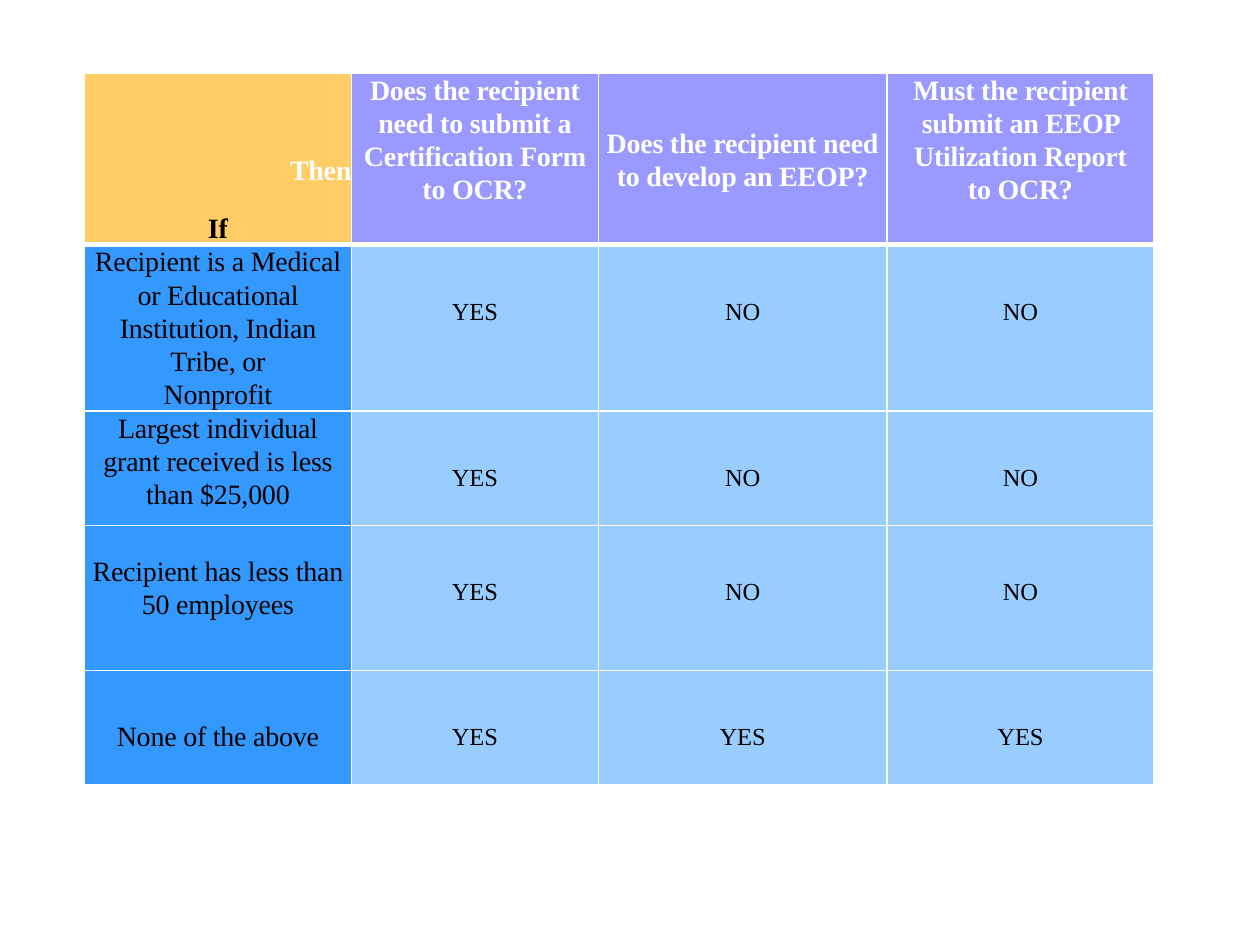
from pptx import Presentation
from pptx.dml.color import RGBColor
from pptx.enum.text import MSO_ANCHOR, PP_ALIGN
from pptx.oxml import parse_xml
from pptx.oxml.ns import nsdecls
from pptx.util import Inches, Pt

TOP = MSO_ANCHOR.TOP
MID = PP_ALIGN.CENTER
RIGHT = PP_ALIGN.RIGHT

HUES = {"white": "FFFFFF", "black": "000000", "gold": "FFCC66",
        "violet": "9999FF", "blue": "3399FF", "pale": "99CCFF"}
COLS = [2.12, 1.96, 2.29, 2.12]
ROWS = [1.36, 1.3, 0.91, 1.15, 0.91]
HEADS = [
    ("Does the recipient need to submit a Certification Form to OCR?", 0, 0.07),
    ("Does the recipient need\nto develop an EEOP?", 0.42, 0),
    ("Must the recipient submit an EEOP Utilization Report to OCR?", 0, 0.2),
]
CASES = [
    ("Recipient is a Medical or Educational Institution, Indian Tribe, or\nNonprofit",
     0, ["YES", "NO", "NO"]),
    ("Largest individual grant received is less than $25,000",
     0, ["YES", "NO", "NO"]),
    ("Recipient has less than 50 employees", 0.23, ["YES", "NO", "NO"]),
    ("None of the above", 0.39, ["YES", "YES", "YES"]),
]


def hue(name):
    return RGBColor.from_string(HUES[name])


def edge(cell, side, width):
    cell._tc.get_or_add_tcPr().append(parse_xml(
        f'<a:ln{side} {nsdecls("a")} w="{Pt(width)}"><a:solidFill>'
        f'<a:srgbClr val="{HUES["white"]}"/></a:solidFill></a:ln{side}>'))


def frame(cell, fill, top, side, head):
    for mark in "LRT":
        edge(cell, mark, 1)
    edge(cell, "B", 3 if head else 1)
    cell.fill.solid()
    cell.fill.fore_color.rgb = hue(fill)
    cell.vertical_anchor = TOP
    cell.margin_left = cell.margin_right = Inches(side)
    cell.margin_top, cell.margin_bottom = Inches(top), 0


def style(para, color, size, bold, align=MID):
    para.alignment = align
    para.line_spacing = 1.07
    for run in para.runs:
        font = run.font
        font.name = "Times New Roman"
        font.size = Pt(size)
        font.bold = bold
        font.color.rgb = hue(color)
        run._r.get_or_add_rPr().set("spc", "-10")


def write(cell, text, fill, color, size=16, top=0, side=0, head=False):
    frame(cell, fill, top, side, head)
    cell.text_frame.text = text
    for para in cell.text_frame.paragraphs:
        style(para, color, size, head)


def corner(cell):
    write(cell, "Then\nIf", "gold", "black", top=0.64, head=True)
    then, cond = cell.text_frame.paragraphs
    style(then, "white", 16, True, RIGHT)
    cond.space_before = Pt(14)


def grid(slide):
    table = slide.shapes.add_table(
        len(ROWS), len(COLS), Inches(0.67), Inches(0.58),
        Inches(sum(COLS)), Inches(sum(ROWS))).table
    table.horz_banding = False
    for col, width in zip(table.columns, COLS):
        col.width = Inches(width)
    for row, height in zip(table.rows, ROWS):
        row.height = Inches(height)
    return table


def main():
    deck = Presentation()
    deck.slide_width, deck.slide_height = Inches(10), Inches(7.5)
    table = grid(deck.slides.add_slide(deck.slide_layouts[6]))
    corner(table.cell(0, 0))
    for col, (text, top, side) in enumerate(HEADS, 1):
        write(table.cell(0, col), text, "violet", "white",
              top=top, side=side, head=True)
    for row, (label, top, replies) in enumerate(CASES, 1):
        write(table.cell(row, 0), label, "blue", "black", top=top, side=0.04)
        for col, reply in enumerate(replies, 1):
            write(table.cell(row, col), reply, "pale", "black", 14, 0.41)
    deck.save("out.pptx")


if __name__ == "__main__":
    main()
